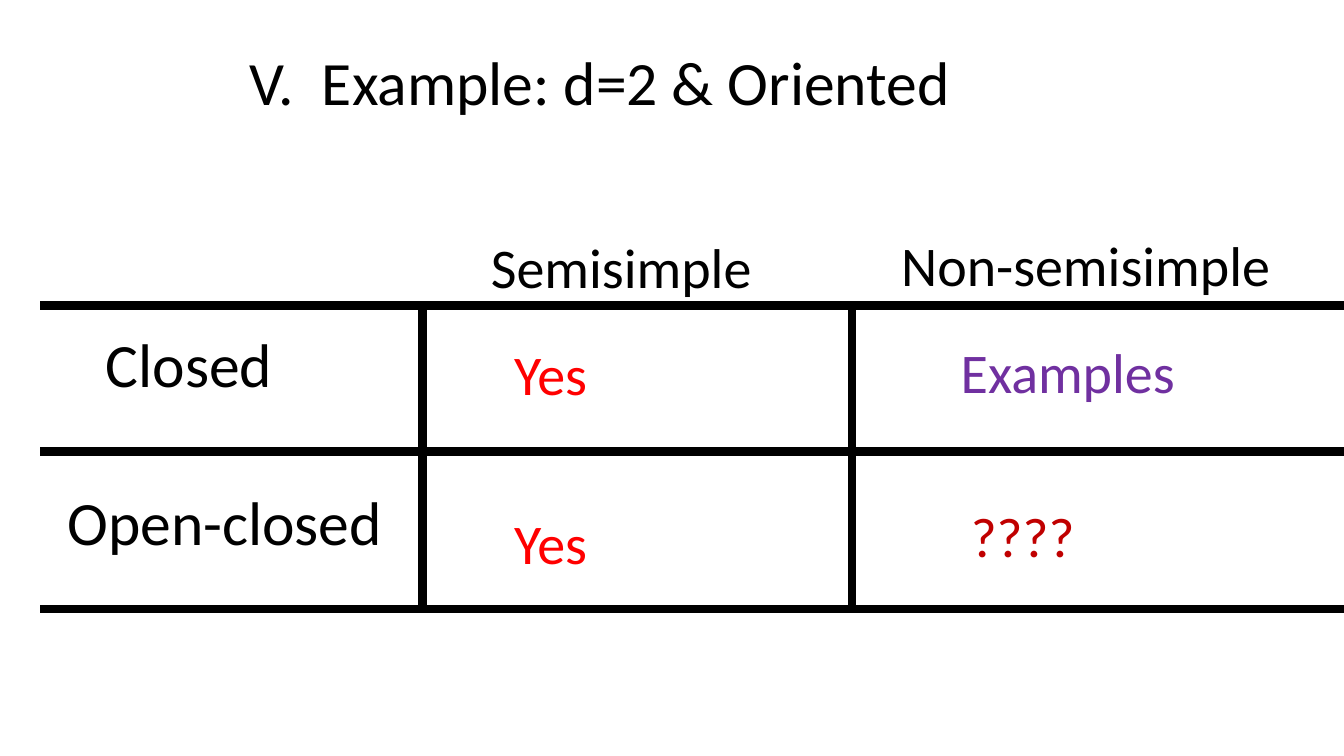
from lxml import etree
from pptx import Presentation
from pptx.dml.color import RGBColor
from pptx.enum.shapes import MSO_CONNECTOR
from pptx.enum.text import MSO_AUTO_SIZE
from pptx.oxml.ns import qn
from pptx.util import Inches, Pt

STRAIGHT = MSO_CONNECTOR.STRAIGHT
GROW = MSO_AUTO_SIZE.SHAPE_TO_FIT_TEXT
BLACK, RED, PURPLE, DARK_RED = "000000", "FF0000", "7030A0", "C00000"
LARGE, MEDIUM = 44, 40
LABEL_HEIGHTS = {LARGE: 0.84, MEDIUM: 0.77}


def color(hex_value):
    return RGBColor.from_string(hex_value)


prs = Presentation()
prs.slide_width, prs.slide_height = Inches(13.33), Inches(7.5)
slide = prs.slides.add_slide(prs.slide_layouts[6])

# Grid lines: three row rules, two column rules
grid_left, grid_right = 0.4, 13.33
row_rules = [3.03, 4.48, 6.04]
column_rules = [4.19, 8.45]
rules = [(grid_left, y, grid_right, y) for y in row_rules]
rules += [(x, row_rules[0], x, row_rules[-1]) for x in column_rules]
for ends in rules:
    rule = slide.shapes.add_connector(STRAIGHT, *[Inches(v) for v in ends])
    rule.line.color.rgb = color(BLACK)
    rule.line.width = Pt(6)
    etree.SubElement(rule._element.spPr, qn("a:effectLst"))

# Title, row and column headings, answers: text, left, top, width, size, color
labels = [
    ("V.  Example: d=2 & Oriented", 2.38, 0.39, 8.14, LARGE, BLACK),
    ("Closed", 0.95, 3.18, 3.47, LARGE, BLACK),
    ("Open-closed", 0.57, 4.75, 3.47, LARGE, BLACK),
    ("Semisimple", 4.77, 2.26, 3.36, MEDIUM, BLACK),
    ("Non-semisimple", 8.84, 2.24, 4.11, MEDIUM, BLACK),
    ("Yes", 5, 3.32, 2.92, MEDIUM, RED),
    ("Yes", 5, 5, 2.92, MEDIUM, RED),
    ("Examples", 9.43, 3.3, 2.92, MEDIUM, PURPLE),
    ("????", 9.53, 4.93, 2.92, MEDIUM, DARK_RED),
]
for text, left, top, width, size, text_color in labels:
    label = slide.shapes.add_textbox(
        Inches(left), Inches(top), Inches(width), Inches(LABEL_HEIGHTS[size]))
    frame = label.text_frame
    frame.word_wrap = True
    frame.auto_size = GROW
    frame.text = text
    font = frame.paragraphs[0].runs[0].font
    font.name = "Calibri"
    font.size = Pt(size)
    font.color.rgb = color(text_color)

prs.save("out.pptx")
